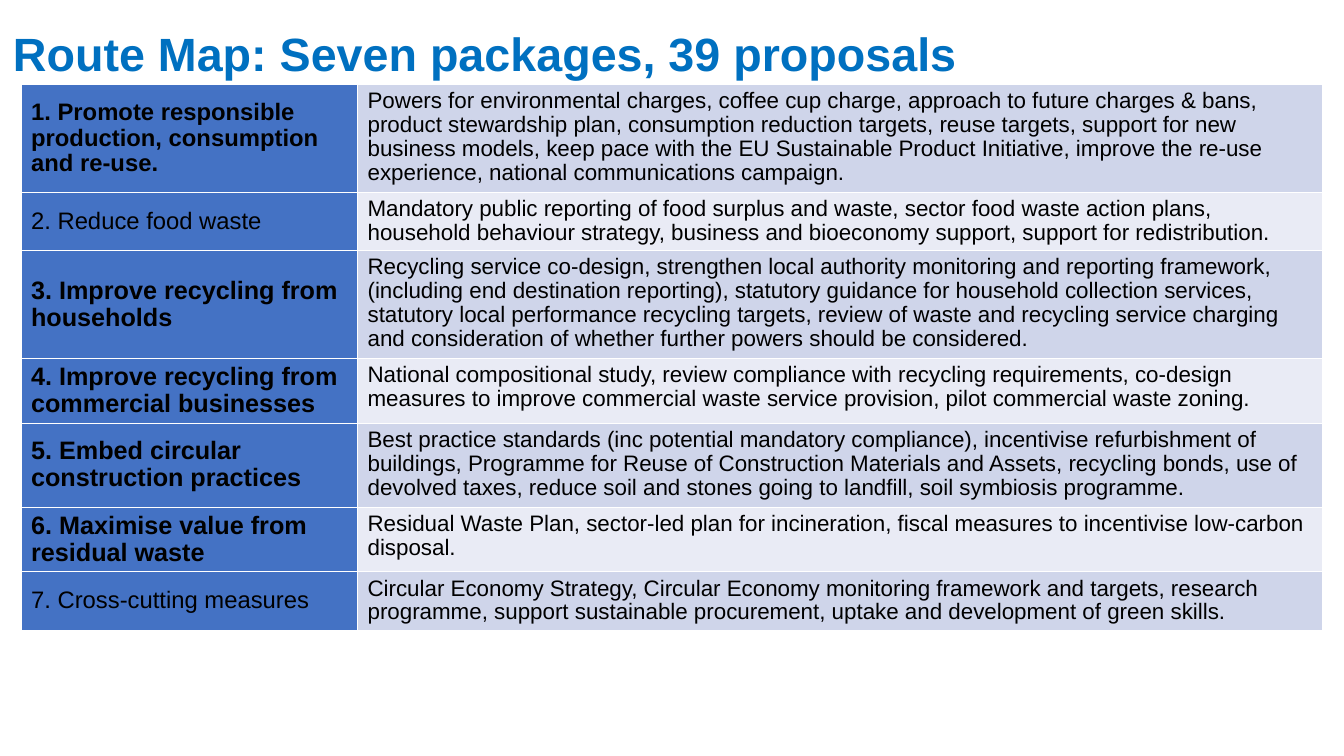
from lxml.etree import SubElement as Sub
from pptx import Presentation
from pptx.dml.color import RGBColor
from pptx.enum.text import MSO_ANCHOR as Anchor, MSO_AUTO_SIZE as Auto, PP_ALIGN as Align
from pptx.oxml.ns import qn
from pptx.util import Cm, Pt

TITLE = "Route Map: Seven packages, 39 proposals"
ROWS = [
    ("1. Promote responsible production, consumption and re-use.", 17, True, 2.72,
     "Powers for environmental charges, coffee cup charge, approach to future charges & bans, "
     "product stewardship plan, consumption reduction targets, reuse targets, support for new "
     "business models, keep pace with the EU Sustainable Product Initiative, improve the re-use "
     "experience, national communications campaign."),
    ("2. Reduce food waste", 17, False, 1.47,
     "Mandatory public reporting of food surplus and waste, sector food waste action plans, "
     "household behaviour strategy, business and bioeconomy support, support for redistribution."),
    ("3. Improve recycling from households", 18, True, 2.72,
     "Recycling service co-design, strengthen local authority monitoring and reporting framework, "
     "(including end destination reporting), statutory guidance for household collection services, "
     "statutory local performance recycling targets, review of waste and recycling service charging "
     "and consideration of whether further powers should be considered."),
    ("4. Improve recycling from commercial businesses", 18, True, 1.63,
     "National compositional study, review compliance with recycling requirements, co-design "
     "measures to improve commercial waste service provision, pilot commercial waste zoning."),
    ("5. Embed circular construction practices", 18, True, 2.11,
     "Best practice standards (inc potential mandatory compliance), incentivise refurbishment of "
     "buildings, Programme for Reuse of Construction Materials and Assets, recycling bonds, use of "
     "devolved taxes, reduce soil and stones going to landfill, soil symbiosis programme."),
    ("6. Maximise value from residual waste", 18, True, 1.63,
     "Residual Waste Plan, sector-led plan for incineration, fiscal measures to incentivise "
     "low-carbon disposal."),
    ("7. Cross-cutting measures", 17, False, 1.47,
     "Circular Economy Strategy, Circular Economy monitoring framework and targets, research "
     "programme, support sustainable procurement, uptake and development of green skills."),
]
COLS = (8.48, 24.31)
HEAD, BANDS = "4472C4", ("CFD5EA", "E9EBF5")


def color(code):
    return RGBColor.from_string(code)


def put(obj, **vals):
    for name, val in vals.items():
        setattr(obj, name, val)


def style(para, size, bold, code):
    put(para.font, name="Arial", size=Pt(size), bold=bold)
    para.font.color.rgb = color(code)


def edge(cell):
    props = cell._tc.get_or_add_tcPr()
    for spot, side in enumerate(("lnL", "lnR", "lnT", "lnB")):
        line = props.makeelement(qn(f"a:{side}"), {"w": str(Pt(1))})
        fill = Sub(line, qn("a:solidFill"))
        Sub(fill, qn("a:srgbClr"), val="FFFFFF")
        props.insert(spot, line)


def fill_cell(cell, text, size, bold, code, anchor):
    cell.text = text
    cell.vertical_anchor = anchor
    cell.fill.solid()
    cell.fill.fore_color.rgb = color(code)
    para = cell.text_frame.paragraphs[0]
    para.line_spacing = 0.96
    style(para, size, bold, "000000")
    edge(cell)


def main():
    deck = Presentation()
    put(deck, slide_width=Cm(33.87), slide_height=Cm(19.05))
    slide = deck.slides.add_slide(deck.slide_layouts[5])

    title = slide.shapes.title
    put(title, left=Cm(-0.28), top=Cm(0.36), width=Cm(25.02), height=Cm(2.34))
    frame = title.text_frame
    frame.text = TITLE
    put(frame, auto_size=Auto.NONE, word_wrap=True,
        vertical_anchor=Anchor.TOP, margin_top=Cm(0.27))
    para = frame.paragraphs[0]
    para.alignment = Align.CENTER
    style(para, 33.3, True, "0070C0")

    high = sum(row[3] for row in ROWS)
    table = slide.shapes.add_table(len(ROWS), len(COLS), Cm(0.53), Cm(2.13),
                                   Cm(sum(COLS)), Cm(high)).table
    put(table, first_row=False, horz_banding=False)
    for col, wide in zip(table.columns, COLS):
        col.width = Cm(wide)
    for i, (name, size, bold, tall, text) in enumerate(ROWS):
        table.rows[i].height = Cm(tall)
        fill_cell(table.cell(i, 0), name, size, bold, HEAD, Anchor.MIDDLE)
        fill_cell(table.cell(i, 1), text, 16, False, BANDS[i % 2], Anchor.TOP)

    deck.save("out.pptx")


if __name__ == "__main__":
    main()
